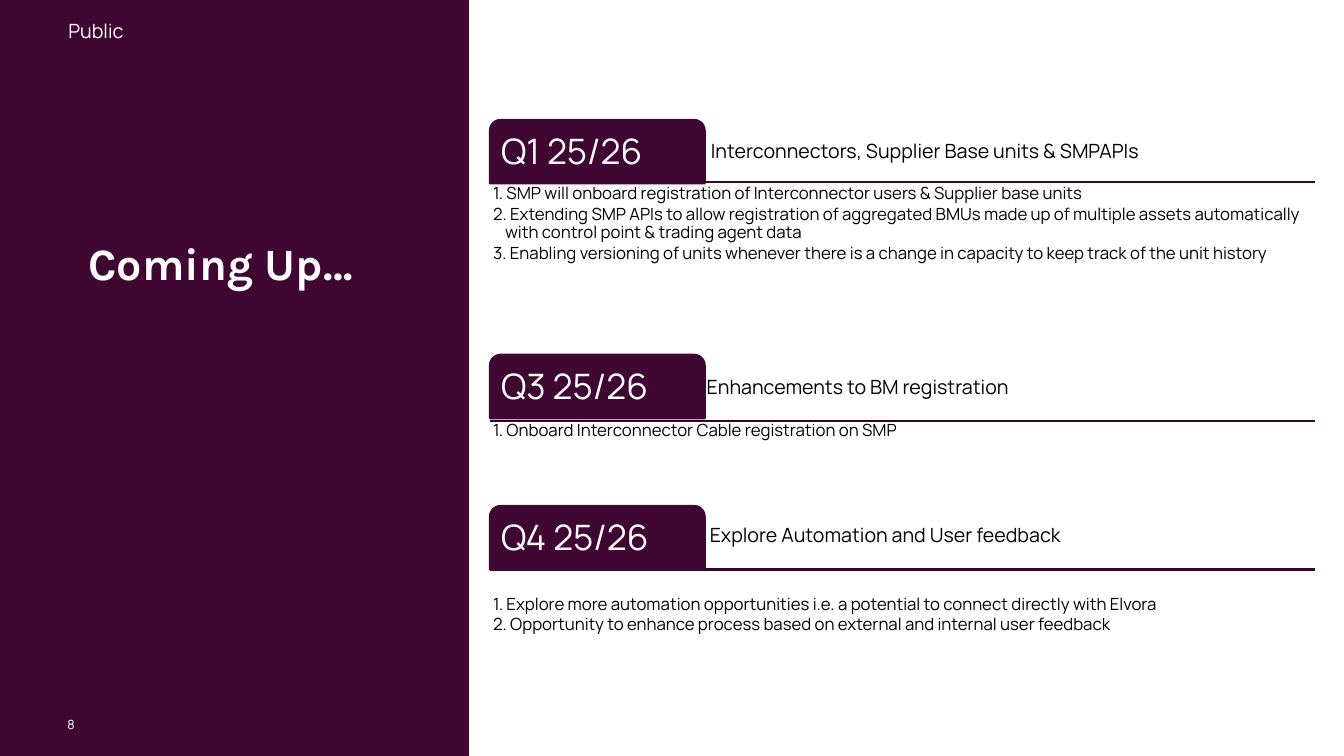
import pptx
import pptx.util
import pptx.dml.color
import pptx.enum.shapes
import pptx.enum.text
import pptx.oxml
import pptx.oxml.ns

Inches = pptx.util.Inches
Pt = pptx.util.Pt
RGBColor = pptx.dml.color.RGBColor
SHAPE = pptx.enum.shapes.MSO_SHAPE
ALIGN = pptx.enum.text.PP_ALIGN
ANCHOR = pptx.enum.text.MSO_ANCHOR

PLUM = RGBColor(0x3F, 0x07, 0x31)
RULE = RGBColor(0x32, 0x06, 0x27)
WHITE = RGBColor(0xFF, 0xFF, 0xFF)
BLACK = RGBColor(0, 0, 0)

TITLE = "Coming Up…"
MARKING = "Public"
PAGE = "8"
QUARTERS = [
    {
        "label": "Q1 25/26",
        "heading": "Interconnectors, Supplier Base units & SMPAPIs",
        "tab_top": 1.19, "rule": 1.81, "list_top": 1.81,
        "heading_at": (7.02, 1.19),
        "items": [
            "1. SMP will onboard registration of Interconnector users & Supplier base units",
            "2. Extending SMP APIs to allow registration of aggregated BMUs made up of multiple assets automatically with control point & trading agent data",
            "3. Enabling versioning of units whenever there is a change in capacity to keep track of the unit history",
        ],
    },
    {
        "label": "Q3 25/26",
        "heading": "Enhancements to BM registration",
        "tab_top": 3.52, "rule": 4.18, "list_top": 4.16,
        "heading_at": (6.98, 3.54),
        "items": ["1. Onboard Interconnector Cable registration on SMP"],
    },
    {
        "label": "Q4 25/26",
        "heading": "Explore Automation and User feedback",
        "tab_top": 5.02, "rule": 5.65, "list_top": 5.88,
        "heading_at": (7.01, 5.0),
        "items": [
            "1. Explore more automation opportunities i.e. a potential to connect directly with Elvora",
            "2. Opportunity to enhance process based on external and internal user feedback",
        ],
    },
]
LEFT, RIGHT = 4.86, 13.04
TAB_W, TAB_H = 2.13, 0.63
LIST_H = 1.03

TITLE_FONT = {"name": "Karla", "size": Pt(32), "bold": True}
LABEL_FONT = {"name": "Manrope", "size": Pt(25)}
HEADING_FONT = {"name": "Manrope", "size": Pt(14)}
LIST_FONT = {"name": "Manrope", "size": Pt(12), "bold": False}
PAGE_FONT = {"name": "Manrope", "size": Pt(9)}


def set_all(target, values):
    for name, value in values.items():
        setattr(target, name, value)


def place(sp, left, top, width, height):
    set_all(sp, {"left": Inches(left), "top": Inches(top),
                 "width": Inches(width), "height": Inches(height)})


def write(sp, lines, font, color, insets=(0.03, 0.03), anchor=ANCHOR.MIDDLE,
          align=ALIGN.LEFT, wrap=True, after=0, hanging=0):
    tf = sp.text_frame
    side, edge = map(Inches, insets)
    set_all(tf, {"word_wrap": wrap, "vertical_anchor": anchor,
                 "auto_size": pptx.enum.text.MSO_AUTO_SIZE.NONE,
                 "margin_left": side, "margin_right": side,
                 "margin_top": edge, "margin_bottom": edge})
    for i, line in enumerate(lines):
        p = tf.add_paragraph() if i else tf.paragraphs[0]
        set_all(p, {"alignment": align, "line_spacing": 0.9,
                    "space_before": Pt(0), "space_after": Pt(after)})
        pPr = p._p.get_or_add_pPr()
        pPr.set("marL", str(Inches(hanging)))
        pPr.set("indent", str(-Inches(hanging)))
        pptx.oxml.ns.qn("a:buNone")
        pPr.append(pptx.oxml.parse_xml(
            "<a:buNone %s/>" % pptx.oxml.ns.nsdecls("a")))
        r = p.add_run()
        r.text = line
        set_all(r.font, font)
        r.font.color.rgb = color


def add_block(s, kind, left, top, width, height):
    sp = s.shapes.add_shape(kind, *map(Inches, (left, top, width, height)))
    sp.shadow.inherit = False
    sp.fill.solid()
    sp.fill.fore_color.rgb = PLUM
    return sp


def add_text(s, box, *args, **kwargs):
    write(s.shapes.add_textbox(*map(Inches, box)), *args, **kwargs)


def add_rule(s, y):
    line = s.shapes.add_connector(
        pptx.enum.shapes.MSO_CONNECTOR.STRAIGHT,
        *map(Inches, (LEFT, y, RIGHT, y)))
    line.line.color.rgb = RULE
    line.line.width = Pt(1.5)
    line._element.spPr.append(pptx.oxml.parse_xml(
        "<a:effectLst %s/>" % pptx.oxml.ns.nsdecls("a")))


def add_quarter(s, quarter, body):
    add_rule(s, quarter["rule"])
    tab = add_block(s, SHAPE.ROUND_2_SAME_RECTANGLE,
                    LEFT, quarter["tab_top"], TAB_W, TAB_H)
    tab.line.color.rgb = PLUM
    tab.line.width = Pt(1.5)
    write(tab, [quarter["label"]], LABEL_FONT, WHITE, insets=(0.08, 0.05))
    x, y = quarter["heading_at"]
    add_text(s, (x, y, RIGHT - x, TAB_H), [quarter["heading"]],
             HEADING_FONT, BLACK)
    place(body, LEFT, quarter["list_top"], RIGHT - LEFT, LIST_H)
    write(body, quarter["items"], LIST_FONT, BLACK, anchor=ANCHOR.TOP,
          after=1.8, hanging=0.12)


def main():
    prs = pptx.Presentation()
    set_all(prs, {"slide_width": Inches(13.33), "slide_height": Inches(7.5)})
    s = prs.slides.add_slide(prs.slide_layouts.get_by_name("Comparison"))
    title, *bodies = s.placeholders

    panel = add_block(s, SHAPE.RECTANGLE, 0, 0, 4.65, 7.5)
    panel.line.fill.background()
    title._element.addprevious(panel._element)

    place(title, 0.29, 0.8, 3.8, 2.13)
    write(title, [TITLE], TITLE_FONT, WHITE, insets=(0.1, 0.05),
          anchor=ANCHOR.BOTTOM, align=ALIGN.CENTER)
    add_text(s, (0.58, 0.15, 4, 0.34), [MARKING], HEADING_FONT, WHITE,
             insets=(0.1, 0.05))
    add_text(s, (0.59, 7.12, 0.15, 0.15), [PAGE], PAGE_FONT, WHITE,
             insets=(0, 0), align=ALIGN.RIGHT, wrap=False)

    for quarter, body in zip(QUARTERS, bodies):
        add_quarter(s, quarter, body)
    for body in bodies[len(QUARTERS):]:
        body._element.getparent().remove(body._element)
    prs.save("out.pptx")


if __name__ == "__main__":
    main()
